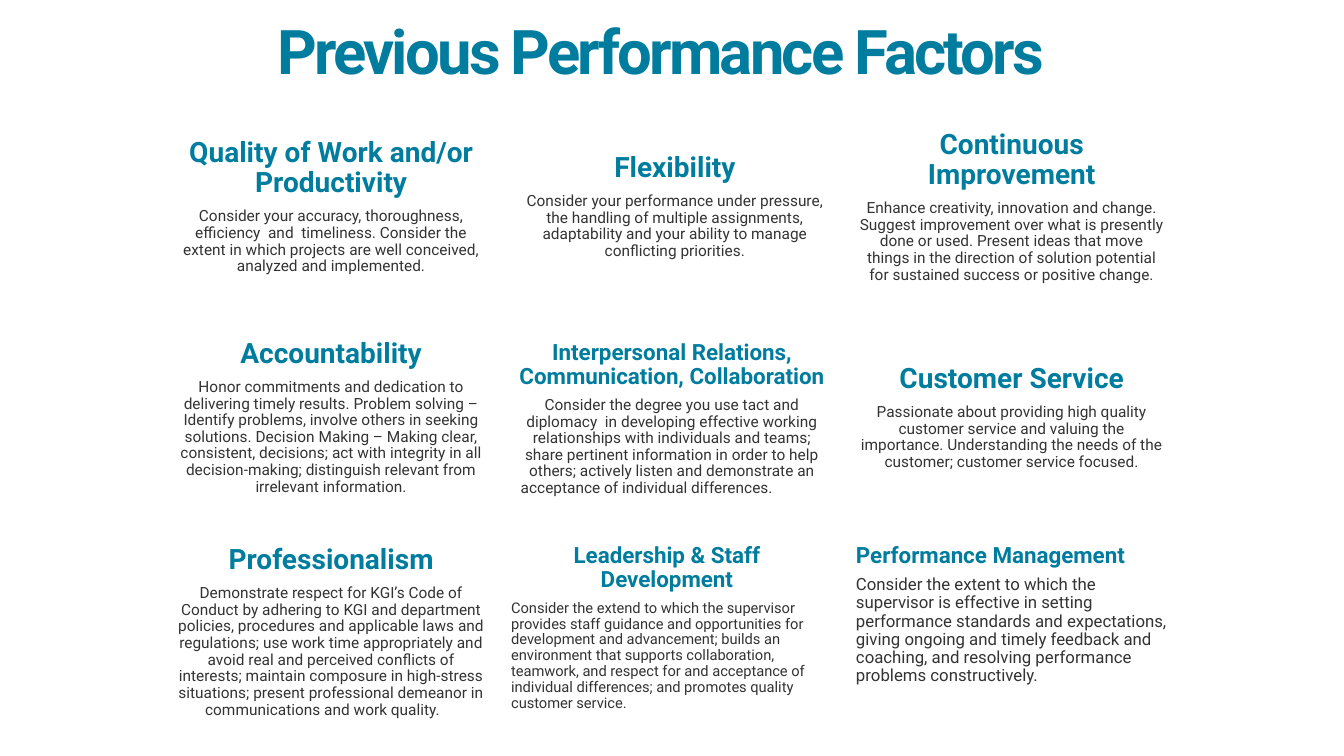
from pptx import Presentation
from pptx.dml.color import RGBColor
from pptx.enum.text import MSO_ANCHOR as Anchor, PP_ALIGN as Align
from pptx.util import Inches, Pt

FONT = "Roboto"
TEAL, GRAY, WHITE = "007D9E", "333333", "FFFFFF"
COLUMNS = (1.67, 5.08, 8.42)
ROWS = (1.08, 3.17, 5.33)
CARD_WIDTH, CARD_HEIGHT = 3.23, 1.94

# Factors in reading order: heading, description, differences from the usual card
FACTORS = [
    ("Quality of Work and/or Productivity",
     "Consider your accuracy, thoroughness, efficiency  and  timeliness. Consider the "
     "extent in which projects are well conceived, analyzed and implemented.", {}),
    ("Flexibility",
     "Consider your performance under pressure, the handling of multiple assignments, "
     "adaptability and your ability to manage conflicting priorities.", {}),
    ("Continuous Improvement",
     "Enhance creativity, innovation and change. Suggest improvement over what is "
     "presently done or used. Present ideas that move things in the direction of "
     "solution potential for sustained success or positive change.", {}),
    ("Accountability",
     "Honor commitments and dedication to delivering timely results. Problem solving – "
     "Identify problems, involve others in seeking solutions. Decision Making – Making "
     "clear, consistent, decisions; act with integrity in all decision-making; "
     "distinguish relevant from irrelevant information.", {}),
    ("Interpersonal Relations, Communication, Collaboration",
     "Consider the degree you use tact and diplomacy  in developing effective working "
     "relationships with individuals and teams; share pertinent information in order to "
     "help others; actively listen and demonstrate an acceptance of individual "
     "differences. \t",
     {"left": 5.05, "top": 3.15, "height": 2.01, "heading_size": 16, "inset": 0.07}),
    ("Customer Service",
     "Passionate about providing high quality customer service and valuing the "
     "importance. Understanding the needs of the customer; customer service focused.", {}),
    ("Professionalism",
     "Demonstrate respect for KGI’s Code of Conduct by adhering to KGI and department "
     "policies, procedures and applicable laws and regulations; use work time "
     "appropriately and avoid real and perceived conflicts of interests; maintain "
     "composure in high-stress situations; present professional demeanor in "
     "communications and work quality. \t", {"anchor": Anchor.TOP}),
    ("Leadership & Staff Development",
     "Consider the extend to which the supervisor provides staff guidance and "
     "opportunities for development and advancement; builds an environment that "
     "supports collaboration, teamwork, and respect for and acceptance of individual "
     "differences; and promotes quality customer service.",
     {"left": 5.0, "anchor": Anchor.TOP, "inset": 0.07, "heading_size": 16,
      "body_size": 10.5, "body_align": Align.LEFT}),
    ("Performance Management",
     "Consider the extent to which the supervisor is effective in setting performance "
     "standards and expectations, giving ongoing and timely feedback and coaching, and "
     "resolving performance problems constructively.",
     {"anchor": Anchor.TOP, "inset": 0.07, "heading_size": 16, "body_size": 12,
      "heading_align": Align.LEFT, "body_align": Align.LEFT}),
]


def color(hex_value):
    return RGBColor.from_string(hex_value)


def add_box(page, left, top, width, height, inset=0.0, anchor=Anchor.MIDDLE):
    box = page.shapes.add_textbox(Inches(left), Inches(top), Inches(width), Inches(height))
    frame = box.text_frame
    frame.word_wrap = True
    frame.vertical_anchor = anchor
    frame.margin_left = frame.margin_right = Inches(inset)
    frame.margin_top = frame.margin_bottom = Inches(inset)
    return box


def write(para, text, size, ink=TEAL, bold=False, align=Align.LEFT, after=0.0, tracking=0):
    """Fill a paragraph; after is a share of the text size, tracking is in points."""
    para.alignment = align
    para.line_spacing = 0.9
    para.space_after = Pt(size * after)
    span = para.add_run()
    span.text = text
    span.font.name = FONT
    span.font.size = Pt(size)
    span.font.bold = bold
    span.font.color.rgb = color(ink)
    if tracking:
        span.font._element.set("spc", str(tracking * 100))


def add_card(page, heading, body, left, top, height=CARD_HEIGHT, inset=0.08,
             anchor=Anchor.MIDDLE, heading_size=20, body_size=11,
             heading_align=Align.CENTER, body_align=Align.CENTER):
    box = add_box(page, left, top, CARD_WIDTH, height, inset, anchor)
    box.fill.solid()
    box.fill.fore_color.rgb = color(WHITE)
    frame = box.text_frame
    write(frame.paragraphs[0], heading, heading_size, bold=True,
          align=heading_align, after=0.35)
    write(frame.add_paragraph(), body, body_size, ink=GRAY,
          align=body_align, after=0.35)


def main():
    deck = Presentation()
    deck.slide_width, deck.slide_height = Inches(13.33), Inches(7.5)
    page = deck.slides.add_slide(deck.slide_layouts[6])

    # Grid of performance factors
    for index, (heading, body, changes) in enumerate(FACTORS):
        row, column = divmod(index, len(COLUMNS))
        layout = {"left": COLUMNS[column], "top": ROWS[row], **changes}
        add_card(page, heading, body, **layout)

    # Title
    title = add_box(page, 2.75, 0, 9.33, 1.08)
    write(title.text_frame.paragraphs[0], "Previous Performance Factors", 44,
          bold=True, tracking=-2)

    deck.save("out.pptx")


if __name__ == "__main__":
    main()
